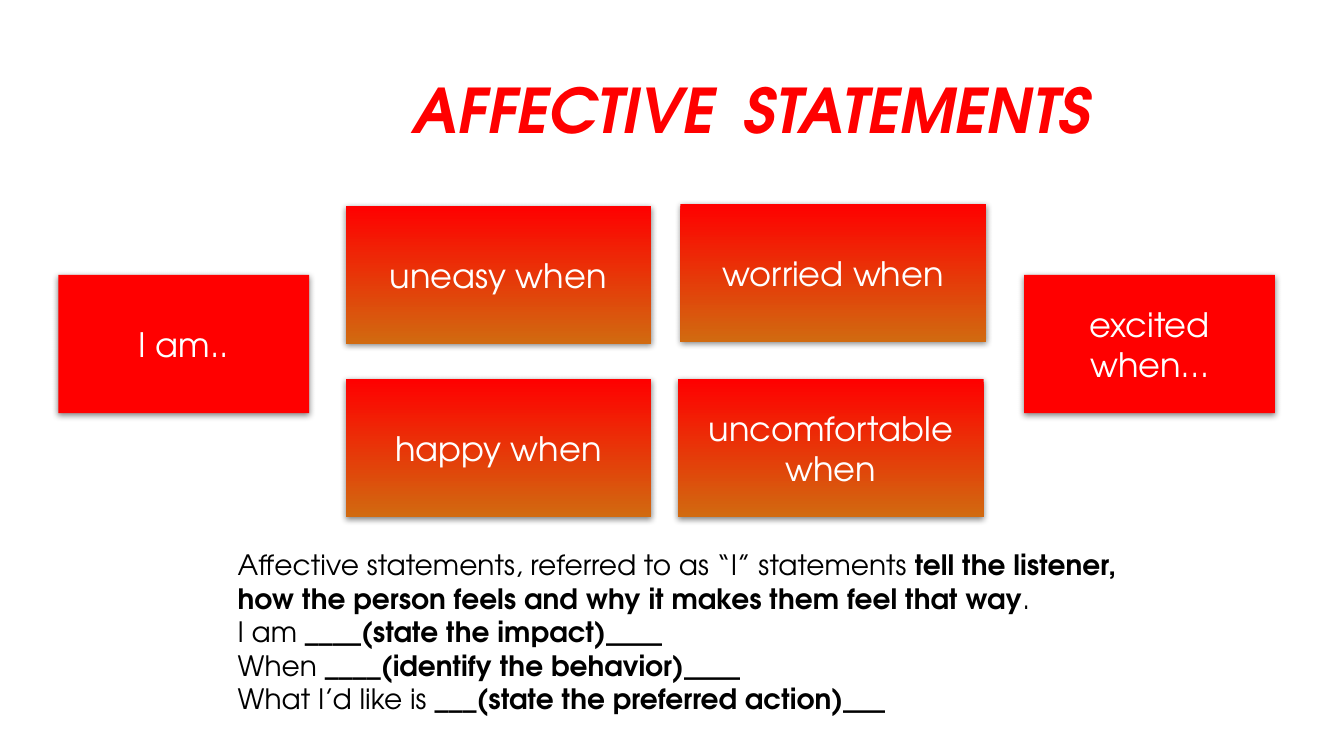
from lxml import etree
from pptx import Presentation
from pptx import util as u
from pptx.dml.color import RGBColor
from pptx.enum import shapes, text
from pptx.oxml.ns import qn

COLORS = {"red": "FF0000", "orange": "D16A10", "white": "FFFFFF", "black": "000000"}


class Deck:
    """Holds the slide style and draws each kind of element."""

    font = "TeX Gyre Adventor"

    def __init__(self):
        self.prs = Presentation()
        self.prs.slide_width, self.prs.slide_height = u.Cm(33.87), u.Cm(19.05)
        self.s = self.prs.slides.add_slide(self.prs.slide_layouts[6])

    def color(self, name):
        return RGBColor.from_string(COLORS[name])

    def fill_text(self, sp, paragraphs, color, anchor, **para):
        tf = sp.text_frame
        tf.word_wrap = True
        tf.vertical_anchor = anchor
        for i, runs in enumerate(paragraphs):
            p = tf.add_paragraph() if i else tf.paragraphs[0]
            for key, value in para.items():
                setattr(p, key, value)
            for words, size, fmt in runs:
                r = p.add_run()
                r.text = words
                r.font.color.rgb = self.color(color)
                for key, value in {"name": self.font, "size": u.Pt(size), **fmt}.items():
                    setattr(r.font, key, value)

    def textbox(self, box, paragraphs, color, anchor, **para):
        sp = self.s.shapes.add_textbox(*map(u.Cm, box))
        self.fill_text(sp, paragraphs, color, anchor, **para)

    def shadow(self, sp):
        sp.shadow.inherit = False
        effects = sp._element.spPr.find(qn("a:effectLst"))
        outer = etree.SubElement(effects, qn("a:outerShdw"), blurRad="57150", dist="19050",
                                 dir="5400000", algn="ctr", rotWithShape="0")
        tint = etree.SubElement(outer, qn("a:srgbClr"), val=COLORS["black"])
        etree.SubElement(tint, qn("a:alpha"), val="48000")

    def card(self, box, words, *fills):
        sp = self.s.shapes.add_shape(shapes.MSO_SHAPE.RECTANGLE, *map(u.Cm, box))
        if len(fills) > 1:
            sp.fill.gradient()
            sp.fill.gradient_angle = 270
            for stop, name in zip(sp.fill.gradient_stops, fills):
                stop.color.rgb = self.color(name)
        else:
            sp.fill.solid()
            sp.fill.fore_color.rgb = self.color(fills[0])
        sp.line.fill.background()
        self.shadow(sp)
        self.fill_text(sp, [[(words, 24, {})]], "white", text.MSO_ANCHOR.MIDDLE,
                       alignment=text.PP_ALIGN.CENTER)


def main():
    deck = Deck()
    heading = {"bold": True, "italic": True}
    deck.textbox((5.74, 1.73, 26.39, 1.6),
                 [[("AFFECTIVE", 44, heading), (" ", 72, heading), ("STATEMENTS", 44, heading)]],
                 "red", text.MSO_ANCHOR.MIDDLE,
                 alignment=text.PP_ALIGN.CENTER, line_spacing=0.9)

    for left, words in ((1.47, "I am.."), (25.81, "excited when…")):
        deck.card((left, 6.93, 6.32, 3.48), words, "red")
    for left, top, words in ((8.71, 5.18, "uneasy when"), (8.71, 9.55, "happy when"),
                             (17.09, 9.55, "uncomfortable when"), (17.15, 5.13, "worried when")):
        deck.card((left, top, 7.7, 3.48), words, "red", "orange")

    lines = (
        ("Affective statements, referred to as “I” statements ",
         "tell the listener, how the person feels and why it makes them feel that way", "."),
        ("I am ", "____(state the impact)____"),
        ("When ", "____(identify the behavior)____"),
        ("What I’d like is ", "___(state the preferred action)___"),
    )
    deck.textbox((5.74, 13.67, 23.85, 5.38),
                 [[(words, 20, {"bold": i == 1}) for i, words in enumerate(line)]
                  for line in lines],
                 "black", text.MSO_ANCHOR.TOP)
    deck.prs.save("out.pptx")


if __name__ == "__main__":
    main()
